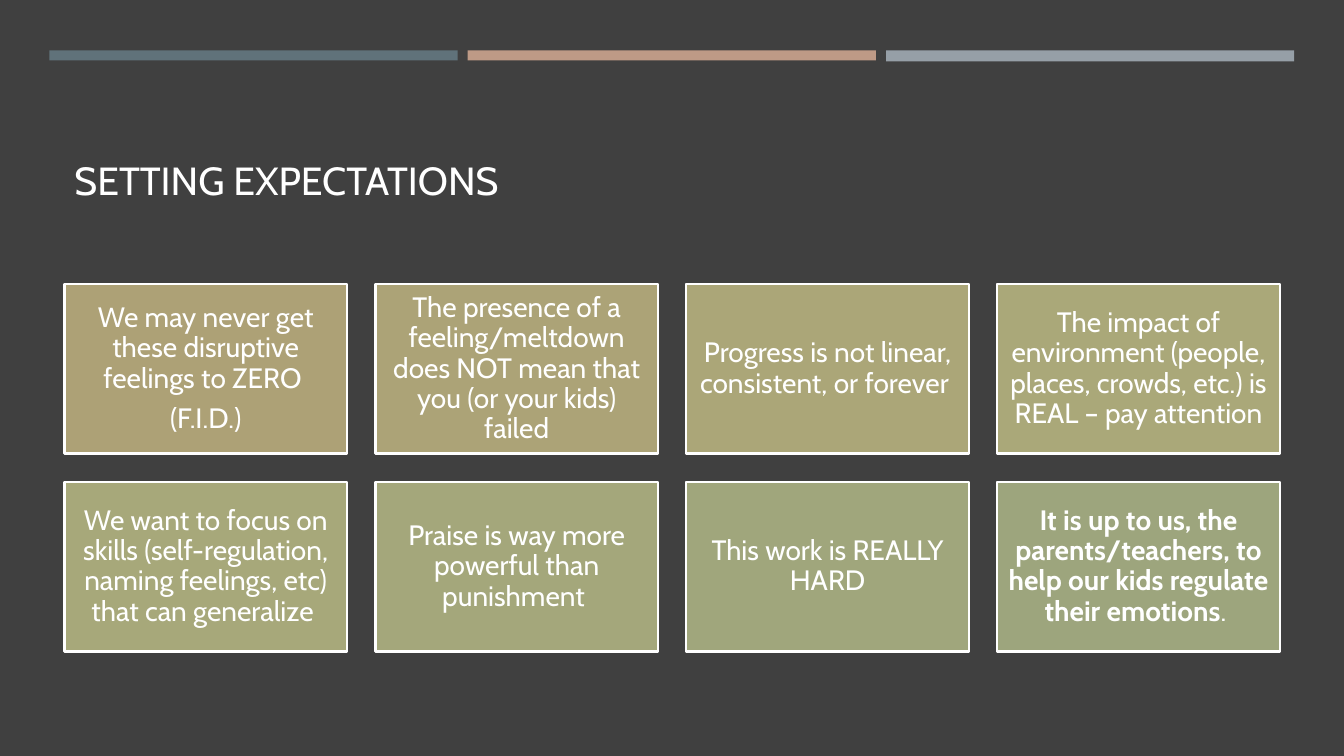
from dataclasses import dataclass

from pptx import Presentation
from pptx.dml.color import RGBColor
from pptx.enum import shapes, text
from pptx.util import Pt

FONT = "Cabin"
WHITE = "FFFFFF"
BACKGROUND = "404040"

BAR_LEFT, BAR_TOP, BAR_WIDTH, BAR_PITCH = 35.3, 36, 291.6, 298.8
CARD_LEFT, CARD_TOP, CARD_WIDTH, CARD_HEIGHT = 46, 203, 201.9, 121.1
CARD_GAP = 20.2
COLUMNS = 4


@dataclass(frozen=True)
class Bar:
    color: str
    height: float


@dataclass(frozen=True)
class Span:
    words: str
    bold: bool = False


@dataclass(frozen=True)
class Card:
    color: str
    paragraphs: list[list[Span]]


BARS = [Bar("60727A", 7.2), Bar("BE9A86", 7.2), Bar("969FA7", 7.8)]

CARDS = [
    Card("ADA176", [[Span("We may never get these disruptive feelings to ZERO ")],
                    [Span("(F.I.D.)")]]),
    Card("ACA377", [[Span("The presence of a feeling/meltdown does NOT mean "
                          "that you (or your kids) failed")]]),
    Card("ABA678", [[Span("Progress is not linear, consistent, or forever ")]]),
    Card("AAA879", [[Span("The impact of environment (people, places, crowds, etc.) "
                          "is REAL – pay attention")]]),
    Card("A7A87A", [[Span("We want to focus on skills (self-regulation, "
                          "naming feelings, etc) that can generalize ")]]),
    Card("A4A77B", [[Span("Praise is way more powerful than punishment ")]]),
    Card("A0A67C", [[Span("This work is REALLY HARD")]]),
    Card("9DA57D", [[Span("It is up to us, the parents/teachers, to help our kids "
                          "regulate their emotions", bold=True),
                     Span(". ")]]),
]


def paint(fill, color: str) -> None:
    fill.solid()
    fill.fore_color.rgb = RGBColor.from_string(color)


def add_span(para, span: Span, size: float) -> None:
    run = para.add_run()
    run.text = span.words
    run.font.name = FONT
    run.font.size = Pt(size)
    run.font.bold = span.bold
    paint(run.font.fill, WHITE)


def add_box(page, left: float, top: float, width: float, height: float, color: str):
    """Add a plain filled rectangle without outline or shadow."""
    box = page.shapes.add_shape(shapes.MSO_SHAPE.RECTANGLE,
                                Pt(left), Pt(top), Pt(width), Pt(height))
    box.shadow.inherit = False
    paint(box.fill, color)
    box.line.fill.background()
    return box


def add_card(page, card: Card, left: float, top: float) -> None:
    box = add_box(page, left, top, CARD_WIDTH, CARD_HEIGHT, card.color)
    paint(box.line.fill, WHITE)
    box.line.width = Pt(1.75)
    frame = box.text_frame
    frame.word_wrap = True
    frame.vertical_anchor = text.MSO_ANCHOR.MIDDLE
    frame.margin_left = frame.margin_right = Pt(6)
    frame.margin_top = frame.margin_bottom = Pt(6)
    for index, spans in enumerate(card.paragraphs):
        para = frame.add_paragraph() if index else frame.paragraphs[0]
        para.alignment = text.PP_ALIGN.CENTER
        para.line_spacing = 0.9
        para.space_before = Pt(7 if index else 0)
        for span in spans:
            add_span(para, span, 20)


def set_title(page, words: str) -> None:
    title = page.shapes.title
    title.left, title.top, title.width, title.height = Pt(46), Pt(55.4), Pt(868.3), Pt(93.6)
    frame = title.text_frame
    frame.word_wrap = True
    frame.auto_size = text.MSO_AUTO_SIZE.NONE
    frame.vertical_anchor = text.MSO_ANCHOR.BOTTOM
    para = frame.paragraphs[0]
    para.alignment = text.PP_ALIGN.LEFT
    add_span(para, Span(words), 28)


def main() -> None:
    deck = Presentation()
    deck.slide_width, deck.slide_height = Pt(960), Pt(540)
    page = deck.slides.add_slide(deck.slide_layouts.get_by_name("Title Only"))
    paint(page.background.fill, BACKGROUND)
    set_title(page, "SETTING EXPECTATIONS")
    for index, bar in enumerate(BARS):
        add_box(page, BAR_LEFT + index * BAR_PITCH, BAR_TOP,
                BAR_WIDTH, bar.height, bar.color)
    for index, card in enumerate(CARDS):
        row, column = divmod(index, COLUMNS)
        add_card(page, card, CARD_LEFT + column * (CARD_WIDTH + CARD_GAP),
                 CARD_TOP + row * (CARD_HEIGHT + CARD_GAP))
    deck.save("out.pptx")


if __name__ == "__main__":
    main()
